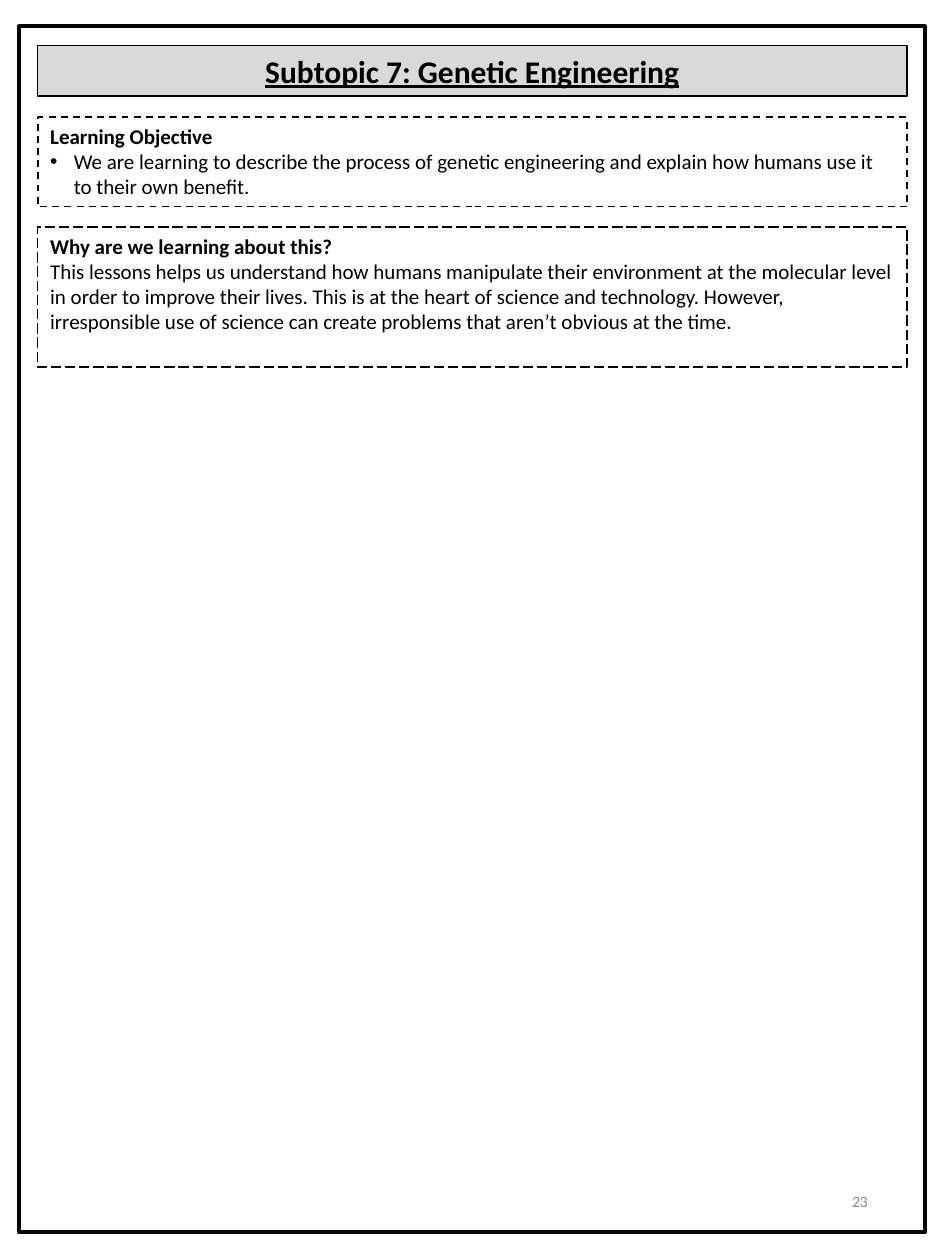
from dataclasses import dataclass

from lxml import etree
from pptx import Presentation
from pptx.dml.color import RGBColor
from pptx.enum.dml import MSO_LINE
from pptx.enum.shapes import MSO_SHAPE
from pptx.enum.text import MSO_ANCHOR, PP_ALIGN
from pptx.oxml.ns import qn
from pptx.util import Pt

RECTANGLE = MSO_SHAPE.RECTANGLE
DASH, LONG_DASH = MSO_LINE.DASH, MSO_LINE.LONG_DASH
TOP, MIDDLE = MSO_ANCHOR.TOP, MSO_ANCHOR.MIDDLE
LEFT, CENTER, RIGHT = PP_ALIGN.LEFT, PP_ALIGN.CENTER, PP_ALIGN.RIGHT


@dataclass(frozen=True)
class Theme:
    font: str = "Calibri"
    ink: RGBColor = RGBColor(0x00, 0x00, 0x00)
    banner: RGBColor = RGBColor(0xD9, 0xD9, 0xD9)
    muted: RGBColor = RGBColor(0x8C, 0x8C, 0x8C)
    title_size: float = 18
    body_size: float = 12
    number_size: float = 9
    bullet_indent: float = 13.5


class Worksheet:
    """Draws the parts of a worksheet page in one theme."""

    def __init__(self, slide, theme):
        self.slide = slide
        self.theme = theme

    def box(self, bounds, weight, dash=None, fill=None):
        panel = self.slide.shapes.add_shape(RECTANGLE, *map(Pt, bounds))
        panel.shadow.inherit = False
        if fill is None:
            panel.fill.background()
        else:
            panel.fill.solid()
            panel.fill.fore_color.rgb = fill
        panel.line.color.rgb = self.theme.ink
        panel.line.width = Pt(weight)
        if dash is not None:
            panel.line.dash_style = dash
        return panel

    def add_words(self, paragraph, words, size, color, align=LEFT, bold=False, underline=False):
        paragraph.alignment = align
        run = paragraph.add_run()
        run.text = words
        run.font.name = self.theme.font
        run.font.size = Pt(size)
        run.font.color.rgb = color
        run.font.bold = bold
        run.font.underline = underline

    def bullet(self, paragraph):
        indent = Pt(self.theme.bullet_indent)
        properties = paragraph._p.get_or_add_pPr()
        properties.set("marL", str(indent))
        properties.set("indent", str(-indent))
        etree.SubElement(properties, qn("a:buFont")).set("typeface", "Arial")
        etree.SubElement(properties, qn("a:buChar")).set("char", "•")

    def frame(self, bounds):
        self.box(bounds, 2.25)

    def title(self, bounds, words):
        frame = self.box(bounds, 0.75, fill=self.theme.banner).text_frame
        frame.vertical_anchor = TOP
        self.add_words(frame.paragraphs[0], words, self.theme.title_size, self.theme.ink,
                       CENTER, bold=True, underline=True)

    def section(self, bounds, heading, body, weight, dash, bulleted=False):
        frame = self.box(bounds, weight, dash).text_frame
        frame.word_wrap = True
        frame.vertical_anchor = TOP
        size, ink = self.theme.body_size, self.theme.ink
        self.add_words(frame.paragraphs[0], heading, size, ink, bold=True)
        detail = frame.add_paragraph()
        self.add_words(detail, body, size, ink)
        if bulleted:
            self.bullet(detail)

    def page_number(self, bounds, number):
        frame = self.slide.shapes.add_textbox(*map(Pt, bounds)).text_frame
        frame.word_wrap = True
        frame.vertical_anchor = MIDDLE
        self.add_words(frame.paragraphs[0], number, self.theme.number_size,
                       self.theme.muted, RIGHT)


def main():
    deck = Presentation()
    deck.slide_width, deck.slide_height = Pt(540), Pt(720)
    page = Worksheet(deck.slides.add_slide(deck.slide_layouts[6]), Theme())
    margin = 21.6
    width = 540 - 2 * margin

    page.frame((10.8, 15.1, 517.7, 689))
    page.section(
        (margin, 67, width, 51),
        "Learning Objective",
        "We are learning to describe the process of genetic engineering and explain "
        "how humans use it to their own benefit.",
        1, DASH, bulleted=True)
    page.section(
        (margin, 129.8, width, 80),
        "Why are we learning about this?",
        "This lessons helps us understand how humans manipulate their environment at the "
        "molecular level in order to improve their lives. This is at the heart of science "
        "and technology. However, irresponsible use of science can create problems that "
        "aren’t obvious at the time.",
        0.75, LONG_DASH)
    page.title((margin, 25.9, width, 29), "Subtopic 7: Genetic Engineering")
    page.page_number((381.6, 667.5, 121.5, 38.2), "23")
    deck.save("out.pptx")


if __name__ == "__main__":
    main()
